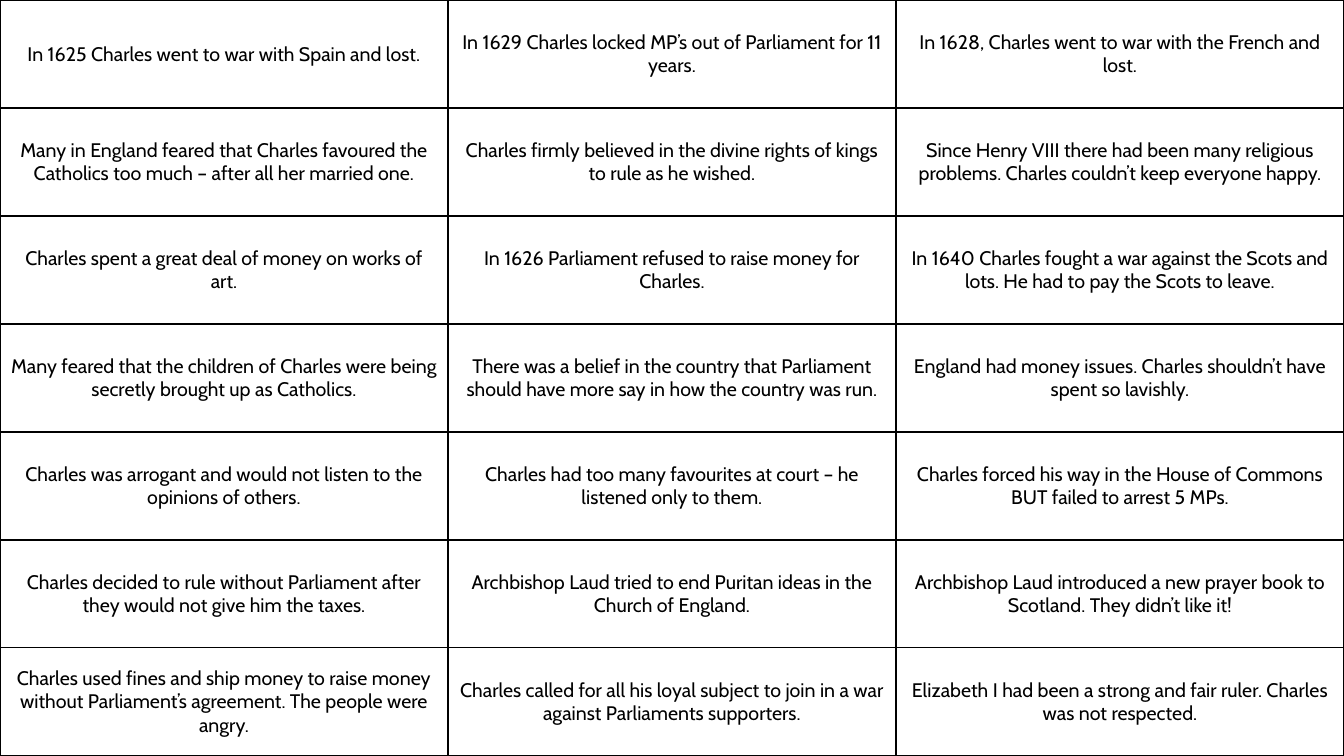
import lxml.etree
import pptx
import pptx.dml.color
import pptx.enum.text
import pptx.oxml.ns
import pptx.util

COLORS = {"text": "000000", "border": "000000", "background": "FFFFFF"}
FONT = "Cabin"
STATEMENTS = [
    ["In 1625 Charles went to war with Spain and lost.",
     "In 1629 Charles locked MP’s out of Parliament for 11 years.",
     "In 1628, Charles went to war with the French and lost."],
    ["Many in England feared that Charles favoured the Catholics too much – after all her married one.",
     "Charles firmly believed in the divine rights of kings to rule as he wished.",
     "Since Henry VIII there had been many religious problems. Charles couldn’t keep everyone happy."],
    ["Charles spent a great deal of money on works of art.",
     "In 1626 Parliament refused to raise money for Charles.",
     "In 1640 Charles fought a war against the Scots and lots. He had to pay the Scots to leave."],
    ["Many feared that the children of Charles were being secretly brought up as Catholics.",
     "There was a belief in the country that Parliament should have more say in how the country was run.",
     "England had money issues. Charles shouldn’t have spent so lavishly."],
    ["Charles was arrogant and would not listen to the opinions of others.",
     "Charles had too many favourites at court – he listened only to them.",
     "Charles forced his way in the House of Commons BUT failed to arrest 5 MPs."],
    ["Charles decided to rule without Parliament after they would not give him the taxes.",
     "Archbishop Laud tried to end Puritan ideas in the Church of England.",
     "Archbishop Laud introduced a new prayer book to Scotland. They didn’t like it!"],
    ["Charles used fines and ship money to raise money without Parliament’s agreement. The people were angry.",
     "Charles called for all his loyal subject to join in a war against Parliaments supporters.",
     "Elizabeth I had been a strong and fair ruler. Charles was not respected."],
]


def color(name):
    return pptx.dml.color.RGBColor.from_string(COLORS[name])


def add_borders(cell, width):
    qn = pptx.oxml.ns.qn
    tc_pr = cell._tc.get_or_add_tcPr()
    for side in ("a:lnL", "a:lnR", "a:lnT", "a:lnB"):
        ln = lxml.etree.SubElement(tc_pr, qn(side), w=str(width))
        fill = lxml.etree.SubElement(ln, qn("a:solidFill"))
        lxml.etree.SubElement(fill, qn("a:srgbClr"), val=COLORS["border"])


def format_cell(cell, text):
    add_borders(cell, pptx.util.Pt(1))
    cell.fill.background()
    cell.vertical_anchor = pptx.enum.text.MSO_ANCHOR.MIDDLE
    cell.text = text
    p = cell.text_frame.paragraphs[0]
    p.alignment = pptx.enum.text.PP_ALIGN.CENTER
    p.font.name = FONT
    p.font.size = pptx.util.Pt(14)
    p.font.color.rgb = color("text")


def add_statement_grid(s, left, top, width, height):
    rows, columns = len(STATEMENTS), len(STATEMENTS[0])
    table = s.shapes.add_table(rows, columns, left, top, width, height).table
    table.first_row = table.horz_banding = False
    for column in table.columns:
        column.width = width // columns
    for row, texts in zip(table.rows, STATEMENTS):
        row.height = height // rows
        for cell, text in zip(row.cells, texts):
            format_cell(cell, text)


def main():
    prs = pptx.Presentation()
    prs.slide_width = pptx.util.Inches(13.33)
    prs.slide_height = pptx.util.Inches(7.5)
    s = prs.slides.add_slide(prs.slide_layouts[6])
    s.background.fill.solid()
    s.background.fill.fore_color.rgb = color("background")
    add_statement_grid(s, 0, 0, prs.slide_width, prs.slide_height)
    prs.save("out.pptx")


if __name__ == "__main__":
    main()
